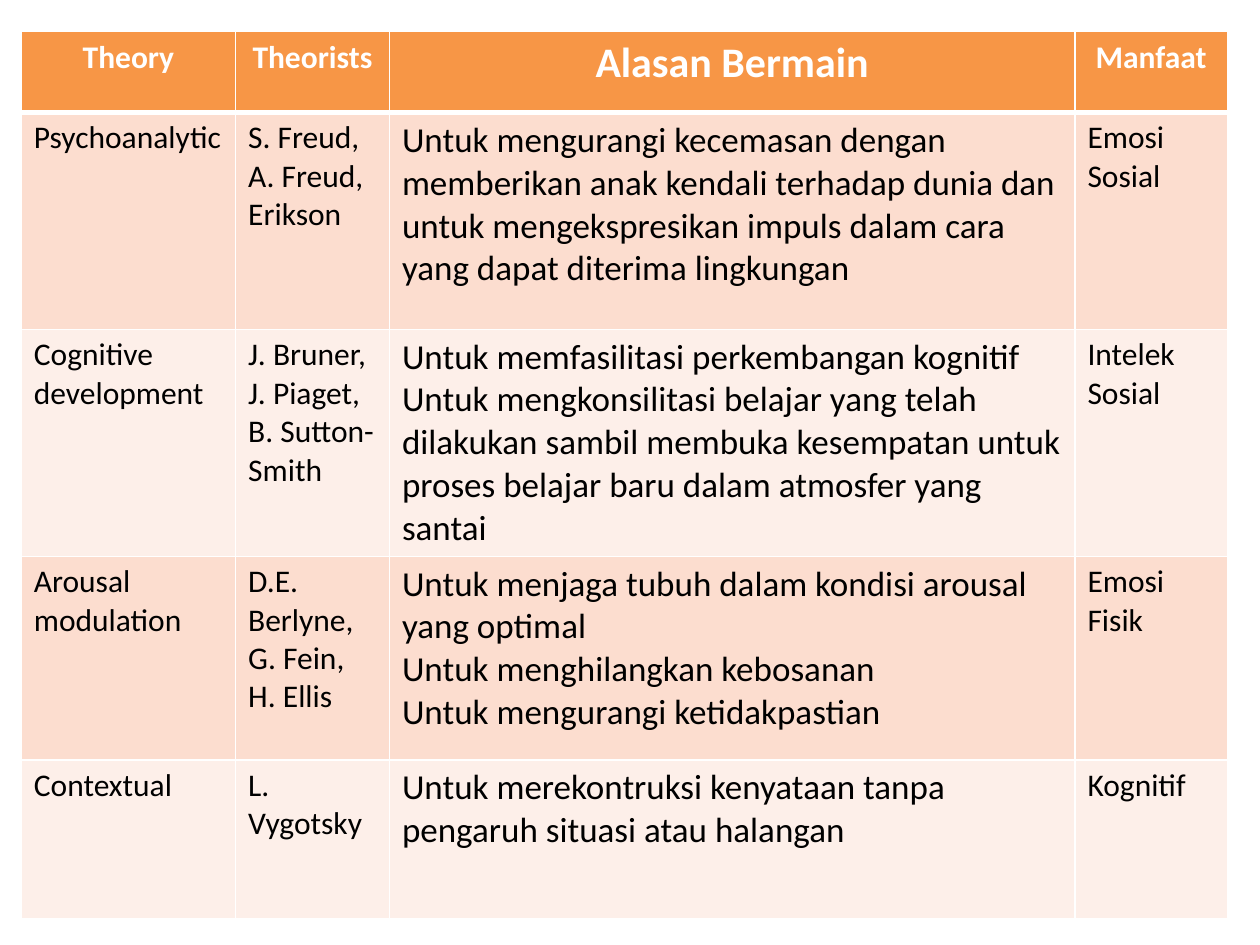
from lxml.etree import SubElement
from pptx import Presentation
from pptx.dml.color import RGBColor
from pptx.enum.text import PP_ALIGN
from pptx.oxml.ns import qn
from pptx.util import Cm, Pt

FONT = "Calibri"
WHITE, BLACK, ORANGE = "FFFFFF", "000000", "F79646"
BANDS = ("FCDDCF", "FDEFE9")
REASON_COL = 2

COL_WIDTHS = (4.32, 3.1, 13.82, 3.07)
ROW_HEIGHTS = (1.63, 4.37, 4.5, 4.11, 3.2)

HEADERS = ("Theory", "Theorists", "Alasan Bermain", "Manfaat")
THEORIES = (
    ("Psychoanalytic",
     "S. Freud,\nA. Freud,\nErikson",
     "Untuk mengurangi kecemasan dengan memberikan anak kendali terhadap "
     "dunia dan untuk mengekspresikan impuls dalam cara yang dapat diterima "
     "lingkungan",
     "Emosi\nSosial"),
    ("Cognitive development",
     "J. Bruner,\nJ. Piaget,\nB. Sutton-Smith",
     "Untuk memfasilitasi perkembangan kognitif\n"
     "Untuk mengkonsilitasi belajar yang telah dilakukan sambil membuka "
     "kesempatan untuk proses belajar baru dalam atmosfer yang santai",
     "Intelek\nSosial"),
    ("Arousal modulation",
     "D.E. Berlyne,\nG. Fein,\nH. Ellis",
     "Untuk menjaga tubuh dalam kondisi arousal yang optimal\n"
     "Untuk menghilangkan kebosanan\n"
     "Untuk mengurangi ketidakpastian",
     "Emosi\nFisik"),
    ("Contextual",
     "L. Vygotsky",
     "Untuk merekontruksi kenyataan tanpa pengaruh situasi atau halangan",
     "Kognitif"),
)


def rgb(color):
    return RGBColor.from_string(color)


def set_borders(cell, color, **widths):
    """Draw the cell's sides; widths are points keyed by L, R, T, B in that order."""
    tc_pr = cell._tc.get_or_add_tcPr()
    for side, width in widths.items():
        ln = SubElement(tc_pr, qn(f"a:ln{side}"), w=str(Pt(width)))
        fill = SubElement(ln, qn("a:solidFill"))
        SubElement(fill, qn("a:srgbClr"), val=color)


def fill_cell(cell, text, size, fill, color, header):
    top, bottom = (1, 3) if header else (1, 1)
    set_borders(cell, WHITE, L=1, R=1, T=top, B=bottom)
    cell.fill.solid()
    cell.fill.fore_color.rgb = rgb(fill)
    cell.text_frame.text = text
    for p in cell.text_frame.paragraphs:
        p.alignment = PP_ALIGN.CENTER if header else PP_ALIGN.LEFT
        p.font.name = FONT
        p.font.size = Pt(size)
        p.font.bold = header
        p.font.color.rgb = rgb(color)


def add_theory_table(s, left, top):
    rows = (HEADERS, *THEORIES)
    table = s.shapes.add_table(
        len(rows), len(HEADERS), Cm(left), Cm(top),
        Cm(sum(COL_WIDTHS)), Cm(sum(ROW_HEIGHTS))).table
    for column, width in zip(table.columns, COL_WIDTHS):
        column.width = Cm(width)
    for row, height in zip(table.rows, ROW_HEIGHTS):
        row.height = Cm(height)

    for i, texts in enumerate(rows):
        header = i == 0
        fill, color = (ORANGE, WHITE) if header else (BANDS[(i - 1) % 2], BLACK)
        reason_size = 24 if header else 20
        for j, text in enumerate(texts):
            size = reason_size if j == REASON_COL else 18
            fill_cell(table.cell(i, j), text, size, fill, color, header)
            if i == 1:
                bottom_of_header = table.cell(i, j)._tc.tcPr.find(qn("a:lnT"))
                bottom_of_header.set("w", str(Pt(3)))


def main():
    prs = Presentation()
    prs.slide_width, prs.slide_height = Cm(25.4), Cm(19.05)
    s = prs.slides.add_slide(prs.slide_layouts[6])
    add_theory_table(s, 0.43, 0.64)
    prs.save("out.pptx")


if __name__ == "__main__":
    main()
